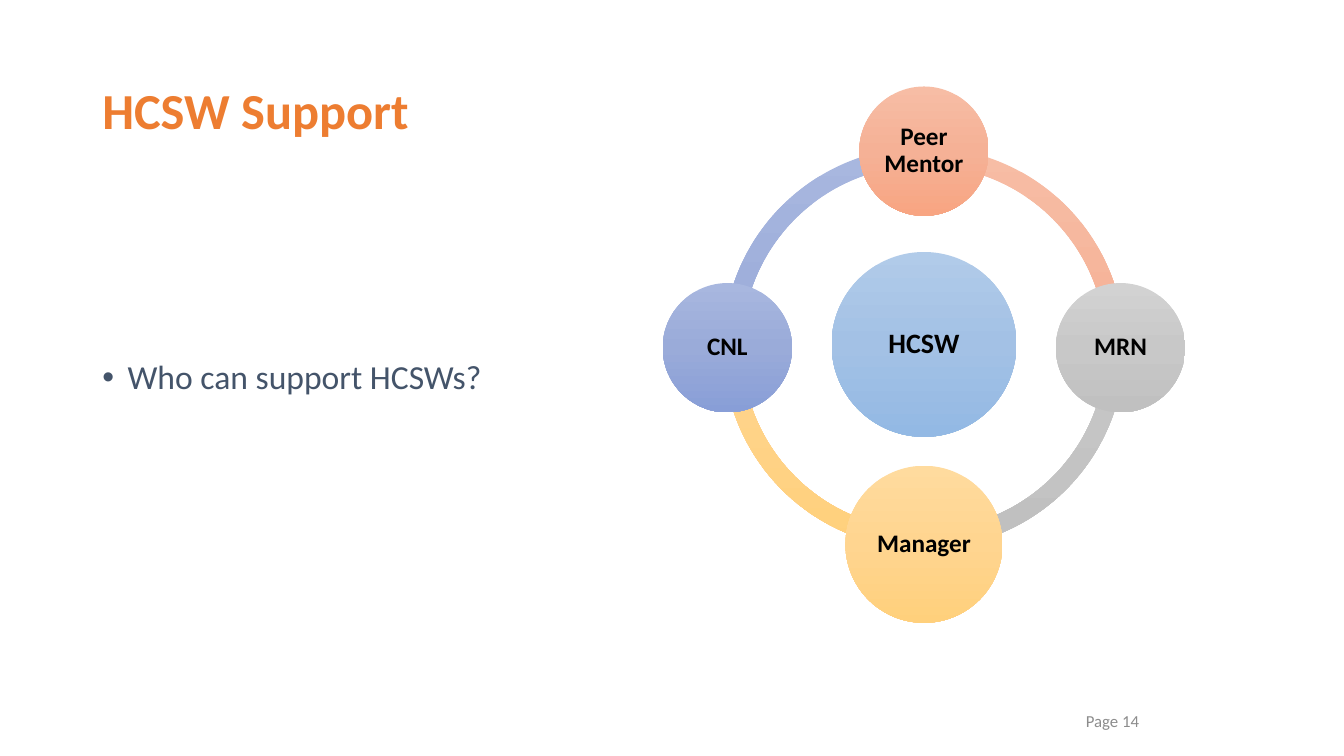
from copy import deepcopy
from dataclasses import dataclass
from math import cos, radians, sin

from lxml.etree import SubElement
from pptx import Presentation
from pptx.dml.color import RGBColor
from pptx.enum.shapes import MSO_SHAPE
from pptx.enum.text import MSO_ANCHOR, PP_ALIGN
from pptx.oxml.ns import qn
from pptx.shapes.autoshape import Shape
from pptx.slide import Slide
from pptx.text.text import TextFrame
from pptx.util import Emu, Inches, Pt

COLUMNS = 160
SLIDE_WIDTH, SLIDE_HEIGHT = Inches(13.333), Inches(7.5)
CELL = SLIDE_WIDTH / COLUMNS

Gradient = tuple[str, str, str]


@dataclass(frozen=True)
class Theme:
    font: str = "Calibri"
    title: str = "ED7D31"
    body: str = "44546A"
    footer: str = "8C8C8C"
    label: str = "000000"
    blue: Gradient = ("B1CBE9", "A3C1E5", "93B9E4")
    orange: Gradient = ("F7BDA5", "F5B196", "F8A582")
    grey: Gradient = ("D2D2D2", "C8C8C8", "C0C0C0")
    gold: Gradient = ("FFDB9E", "FFD590", "FFD07C")
    indigo: Gradient = ("A8B7DF", "9AABD9", "889ED7")
    title_size: int = 36
    body_size: int = 24
    hub_size: int = 20
    node_size: int = 18
    footer_size: int = 12


@dataclass(frozen=True)
class Box:
    column: float
    row: float
    columns: float
    rows: float

    def lengths(self) -> tuple[Emu, ...]:
        cells = (self.column, self.row, self.columns, self.rows)
        return tuple(Emu(round(cell * CELL)) for cell in cells)


@dataclass(frozen=True)
class TextItem:
    text: str
    box: Box
    size: int
    color: str
    bold: bool = False
    align: PP_ALIGN = PP_ALIGN.LEFT
    line_spacing: float = 0.9
    bullet: bool = False


@dataclass(frozen=True)
class Node:
    text: str
    angle: int
    diameter: float
    gradient: Gradient


THEME = Theme()

TEXTS = (
    TextItem("HCSW Support", Box(11, 4.8, 138, 17.4), THEME.title_size, THEME.title, bold=True),
    TextItem("Who can support HCSWs?", Box(11, 42, 68, 6.2), THEME.body_size, THEME.body, bullet=True),
    TextItem("Page 14", Box(119, 83.4, 17.8, 4.8), THEME.footer_size, THEME.footer,
             align=PP_ALIGN.RIGHT, line_spacing=1.0),
)

WHEEL_COLUMN, WHEEL_ROW = 110, 41.4
HUB_ROW, HUB_DIAMETER = 41, 22
RING_DIAMETER, RING_THICKNESS = 47.8, 0.046
ORBIT_RADIUS = 23.4
ARC_SWEEP = 90
ADJUSTMENT_PER_DEGREE = 0.6

NODES = (
    Node("Peer Mentor", 270, 15.4, THEME.orange),
    Node("MRN", 0, 15.4, THEME.grey),
    Node("Manager", 90, 18.7, THEME.gold),
    Node("CNL", 180, 15.4, THEME.indigo),
)


def centred_square(column: float, row: float, side: float) -> Box:
    return Box(column - side / 2, row - side / 2, side, side)


def write_text(frame: TextFrame, text: str, size: int, color: str, bold: bool,
               align: PP_ALIGN, line_spacing: float) -> None:
    frame.word_wrap = True
    frame.vertical_anchor = MSO_ANCHOR.MIDDLE
    paragraph = frame.paragraphs[0]
    paragraph.text = text
    paragraph.alignment = align
    paragraph.line_spacing = line_spacing
    font = paragraph.runs[0].font
    font.name, font.size, font.bold = THEME.font, Pt(size), bold
    font.color.rgb = RGBColor.from_string(color)


def add_bullet(frame: TextFrame) -> None:
    properties = frame.paragraphs[0]._p.get_or_add_pPr()
    properties.set("marL", str(Inches(0.25)))
    properties.set("indent", str(-Inches(0.25)))
    SubElement(properties, qn("a:buFont"), typeface="Arial")
    SubElement(properties, qn("a:buChar"), char="•")


def add_text(slide: Slide, item: TextItem) -> None:
    frame = slide.shapes.add_textbox(*item.box.lengths()).text_frame
    write_text(frame, item.text, item.size, item.color, item.bold, item.align, item.line_spacing)
    if item.bullet:
        add_bullet(frame)


def add_gradient_shape(slide: Slide, preset: MSO_SHAPE, box: Box, gradient: Gradient) -> Shape:
    shape = slide.shapes.add_shape(preset, *box.lengths())
    shape.shadow.inherit = False
    shape.line.fill.background()
    shape.fill.gradient()
    shape.fill.gradient_angle = 270
    stop_list = shape._element.spPr.find(qn("a:gradFill")).find(qn("a:gsLst"))
    stop_list.insert(1, deepcopy(stop_list[0]))
    for index, (stop, color) in enumerate(zip(shape.fill.gradient_stops, gradient)):
        stop.position = index / 2
        stop.color.rgb = RGBColor.from_string(color)
    return shape


def add_arc(slide: Slide, node: Node) -> None:
    box = centred_square(WHEEL_COLUMN, WHEEL_ROW, RING_DIAMETER)
    arc = add_gradient_shape(slide, MSO_SHAPE.BLOCK_ARC, box, node.gradient)
    end_angle = (node.angle + ARC_SWEEP) % 360
    arc.adjustments[0] = node.angle * ADJUSTMENT_PER_DEGREE
    arc.adjustments[1] = end_angle * ADJUSTMENT_PER_DEGREE
    arc.adjustments[2] = RING_THICKNESS


def add_circle(slide: Slide, text: str, box: Box, gradient: Gradient, size: int) -> None:
    circle = add_gradient_shape(slide, MSO_SHAPE.OVAL, box, gradient)
    frame = circle.text_frame
    frame.margin_left = frame.margin_right = Inches(0.03)
    frame.margin_top = frame.margin_bottom = Inches(0.03)
    write_text(frame, text, size, THEME.label, True, PP_ALIGN.CENTER, 0.9)


def add_node(slide: Slide, node: Node) -> None:
    column = WHEEL_COLUMN + ORBIT_RADIUS * cos(radians(node.angle))
    row = WHEEL_ROW + ORBIT_RADIUS * sin(radians(node.angle))
    box = centred_square(column, row, node.diameter)
    add_circle(slide, node.text, box, node.gradient, THEME.node_size)


def main() -> None:
    presentation = Presentation()
    presentation.slide_width, presentation.slide_height = SLIDE_WIDTH, SLIDE_HEIGHT
    slide = presentation.slides.add_slide(presentation.slide_layouts[6])
    for item in TEXTS:
        add_text(slide, item)
    for node in reversed(NODES):
        add_arc(slide, node)
    hub_box = centred_square(WHEEL_COLUMN, HUB_ROW, HUB_DIAMETER)
    add_circle(slide, "HCSW", hub_box, THEME.blue, THEME.hub_size)
    for node in NODES:
        add_node(slide, node)
    presentation.save("out.pptx")


if __name__ == "__main__":
    main()
